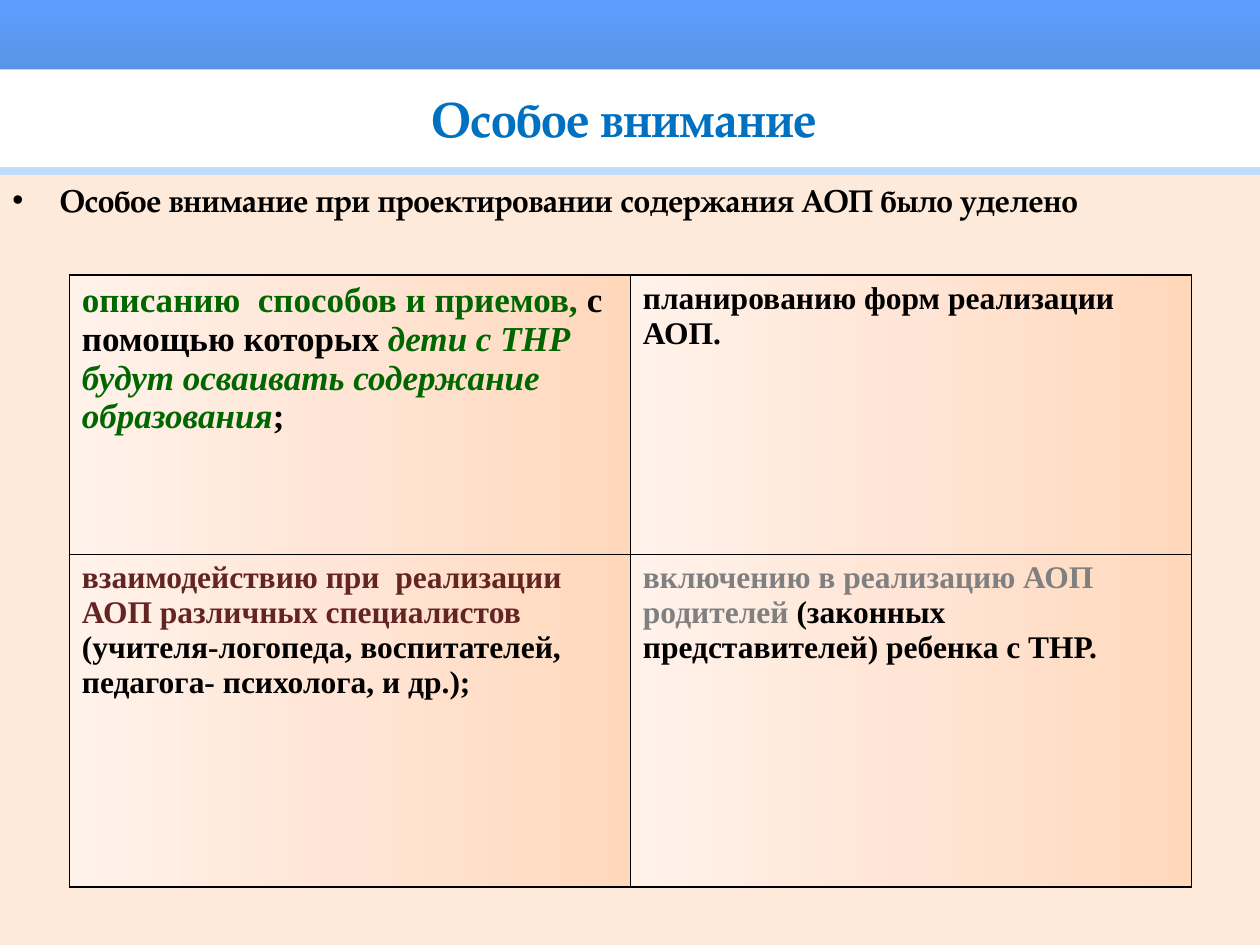
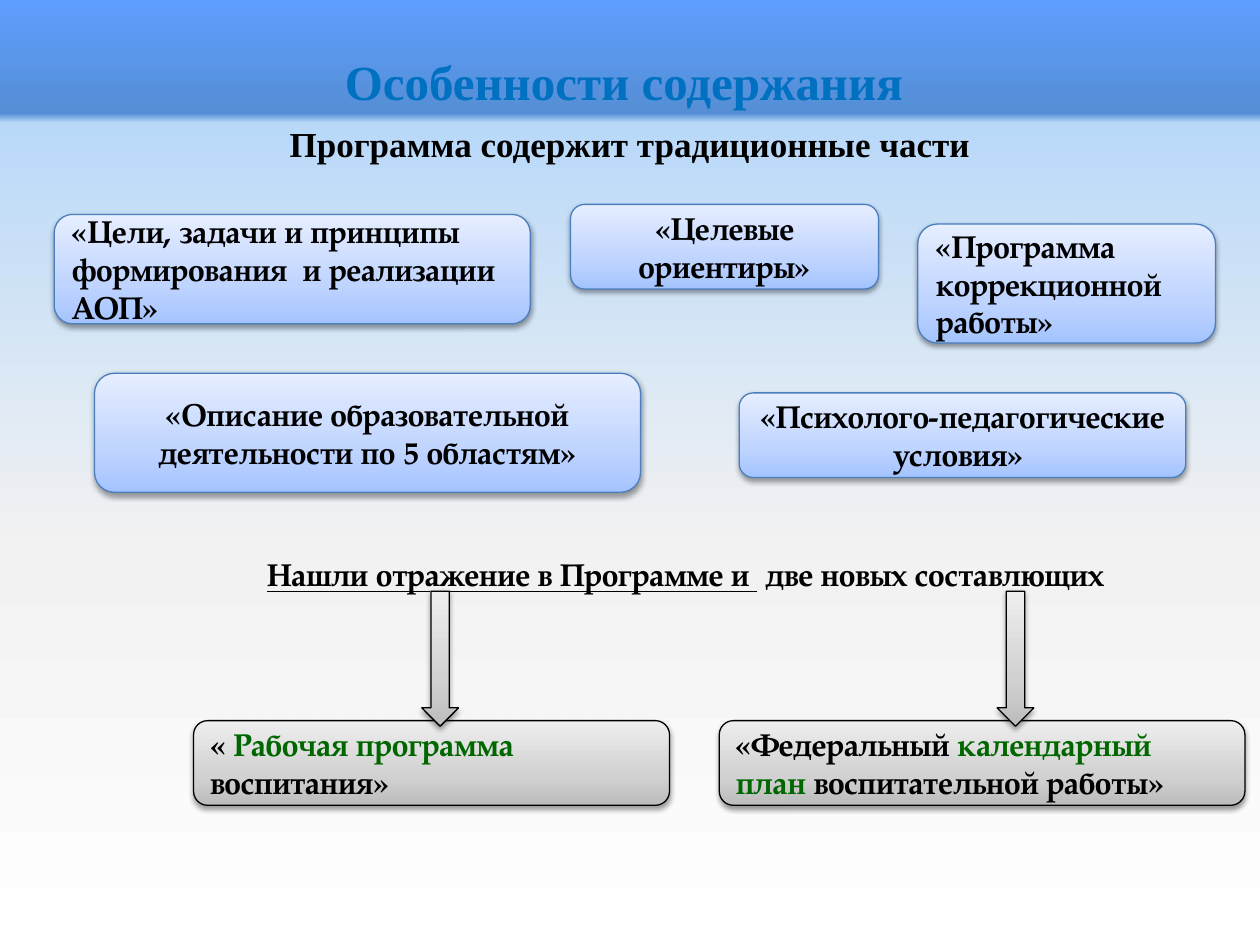
import pptx
import pptx.util
import pptx.dml.color
import pptx.enum.shapes
import pptx.enum.text
import pptx.oxml
import pptx.oxml.ns

Pt = pptx.util.Pt
RGB = pptx.dml.color.RGBColor
SHAPE = pptx.enum.shapes.MSO_SHAPE
ALIGN = pptx.enum.text.PP_ALIGN
ANCHOR = pptx.enum.text.MSO_ANCHOR
qn = pptx.oxml.ns.qn

BLACK = RGB(0, 0, 0)
WHITE = RGB(255, 255, 255)
TITLE_BLUE = RGB(0x00, 0x70, 0xC0)
PEACH = RGB(0xFD, 0xEA, 0xDA)
GREEN = RGB(0x00, 0x66, 0x00)
MAROON = RGB(0x63, 0x25, 0x23)
GREY = RGB(0x80, 0x80, 0x80)
BOX_BLUE = RGB(0x4B, 0x7E, 0xBC)

# Gradients: angle in degrees, then (position in percent, colour)
SKY = (90, [(0, "5E9EFF"), (12, "558ED5"), (13, "B9D9F9"), (58, "F2F2F2"), (100, "FFFFFF")])
PEACH_FADE = (180, [(0, "FFD8BC"), (50, "FFE5D5"), (100, "FFF2EA")])
BLUE_FADE = (270, [(0, "A4C4FF"), (35, "BFD4FF"), (100, "E6EEFF")])
GREY_FADE = (270, [(0, "BDBDBD"), (35, "D1D1D1"), (100, "EEEEEE")])

PAGELLA = "TeX Gyre Pagella"
TIMES = "Times New Roman"
WIDTH, HEIGHT = 720, 540

# A run is (text, overrides of the text style)
ATTENTION_TITLE = "Особое внимание "
ATTENTION_INTRO = "Особое внимание при проектировании содержания АОП было уделено"
ATTENTION_CELLS = [
    [(20, [("описанию  способов и приемов,", {"color": GREEN}),
           (" с помощью которых ", {}),
           ("дети с ТНР будут осваивать содержание образования",
            {"color": GREEN, "italic": True}),
           (";", {})]),
     (18, [("планированию форм реализации АОП.", {})])],
    [(18, [("взаимодействию при  реализации АОП различных специалистов ", {"color": MAROON}),
           ("(учителя-логопеда, воспитателей, педагога- психолога, и др.);", {})]),
     (18, [("включению в реализацию АОП родителей ", {"color": GREY}),
           ("(законных представителей) ребенка с ТНР.", {})])],
]
TABLE_LEFT, TABLE_TOP = 39.6, 157
COLUMN_WIDTH, ROW_HEIGHTS = 320.6, (159.8, 190)

CONTENT_TITLE = "Особенности содержания "
CONTENT_INTRO = "Программа содержит традиционные части"
TRADITIONAL_PARTS = [  # text, alignment, (left, top, width, height)
    ("«Цели, задачи и принципы формирования  и реализации АОП»", ALIGN.LEFT,
     (31, 122.5, 272, 62.5)),
    ("«Описание образовательной деятельности по 5 областям»", ALIGN.CENTER,
     (54, 213.3, 312, 68)),
    ("«Целевые ориентиры»", ALIGN.CENTER, (326, 116.8, 176, 48.4)),
    ("«Психолого-педагогические условия» ", ALIGN.CENTER, (422.4, 224.5, 255.2, 48.4)),
    ("«Программа коррекционной работы»", ALIGN.LEFT, (524.4, 128, 170.2, 68)),
]
NEW_PARTS_LEAD = [("Нашли отражение в Программе и ", {"underline": True}),
                  (" две новых составлющих ", {})]
NEW_PARTS = [  # runs, left, width, left of its arrow
    ([("« ", {}), ("Рабочая программа", {"color": GREEN}), (" воспитания»", {})],
     110.6, 272, 241),
    ([("«Федеральный ", {}), ("календарный план ", {"color": GREEN}),
      ("воспитательной работы»", {})], 411, 300.4, 569.8),
]
NEW_PART_TOP, NEW_PART_HEIGHT = 411.8, 48.4
ARROW_TOP, ARROW_WIDTH, ARROW_HEIGHT = 337.8, 21, 77.2


def xml(markup):
    return pptx.oxml.parse_xml(
        markup.replace(">", f" {pptx.oxml.ns.nsdecls('a')}>", 1)
        if "/>" not in markup.split(">", 1)[0] + ">" else markup)


def fill_gradient(fill, properties, gradient):
    """Give a fill, held by the XML element properties, all stops of a gradient."""
    angle, stops = gradient
    fill.gradient()
    old = properties.find(qn("a:gradFill"))
    marks = "".join(f'<a:gs pos="{pos * 1000}"><a:srgbClr val="{color}"/></a:gs>'
                    for pos, color in stops)
    new = xml(f'<a:gradFill rotWithShape="1"><a:gsLst>{marks}</a:gsLst>'
              f'<a:lin ang="{angle * 60000}" scaled="0"/></a:gradFill>')
    properties.replace(old, new)


def write(frame, runs, size, font=PAGELLA, align=ALIGN.LEFT, anchor=ANCHOR.TOP):
    """Write one bold paragraph of runs and return it."""
    frame.word_wrap = True
    frame.vertical_anchor = anchor
    paragraph = frame.paragraphs[0]
    paragraph.alignment = align
    for text, style in runs:
        run = paragraph.add_run()
        run.text = text
        run.font.name = font
        run.font.size = Pt(size)
        run.font.bold = True
        run.font.italic = style.get("italic", False)
        run.font.underline = style.get("underline", False)
        run.font.color.rgb = style.get("color", BLACK)
    return paragraph


def add_slide(deck):
    slide = deck.slides.add_slide(deck.slide_layouts[6])
    fill = slide.background.fill
    fill_gradient(fill, slide.background._cSld.bg.bgPr, SKY)
    return slide


def add_band(slide, top, height, color):
    band = slide.shapes.add_shape(SHAPE.RECTANGLE, 0, Pt(top), Pt(WIDTH), Pt(height))
    band.shadow.inherit = False
    band.fill.solid()
    band.fill.fore_color.rgb = color
    band.line.fill.background()
    return band


def add_text(slide, left, top, width, height):
    return slide.shapes.add_textbox(Pt(left), Pt(top), Pt(width), Pt(height)).text_frame


def write_title(frame, text, font):
    write(frame, [(text, {"color": TITLE_BLUE})], 28, font, ALIGN.CENTER, ANCHOR.MIDDLE)


def add_raised(slide, kind, place, gradient, line_color):
    """Add a shape with a gradient, a thin line and a soft shadow below."""
    shape = slide.shapes.add_shape(kind, *map(Pt, place))
    properties = shape._element.spPr
    fill_gradient(shape.fill, properties, gradient)
    shape.line.color.rgb = line_color
    shape.line.width = Pt(0.75)
    properties.append(xml(
        f'<a:effectLst><a:outerShdw blurRad="{Pt(3.1)}" dist="{Pt(1.6)}" dir="5400000" '
        'rotWithShape="0"><a:srgbClr val="000000"><a:alpha val="38000"/></a:srgbClr>'
        '</a:outerShdw></a:effectLst>'))
    return shape


def add_attention_table(slide):
    table = slide.shapes.add_table(
        len(ROW_HEIGHTS), 2, Pt(TABLE_LEFT), Pt(TABLE_TOP),
        Pt(2 * COLUMN_WIDTH), Pt(sum(ROW_HEIGHTS))).table
    table.first_row = table.horz_banding = False
    for column in table.columns:
        column.width = Pt(COLUMN_WIDTH)
    for r, (height, row) in enumerate(zip(ROW_HEIGHTS, ATTENTION_CELLS)):
        table.rows[r].height = Pt(height)
        for c, (size, runs) in enumerate(row):
            cell = table.cell(r, c)
            write(cell.text_frame, runs, size, TIMES)
            properties = cell._tc.get_or_add_tcPr()
            for side in "LRTB":
                properties.append(xml(
                    f'<a:ln{side} w="{Pt(1)}"><a:solidFill><a:srgbClr val="000000"/>'
                    f'</a:solidFill></a:ln{side}>'))
            fill_gradient(cell.fill, properties, PEACH_FADE)


def build_attention(deck):
    slide = add_slide(deck)
    write_title(add_band(slide, 39.6, 56, WHITE).text_frame, ATTENTION_TITLE, PAGELLA)
    body = add_band(slide, 100, HEIGHT - 100, PEACH)
    intro = write(body.text_frame, [(ATTENTION_INTRO, {})], 18)
    properties = intro._p.get_or_add_pPr()
    properties.set("marL", str(Pt(27)))
    properties.set("indent", str(Pt(-27)))
    properties.append(xml('<a:buFont typeface="Arial"></a:buFont>'))
    properties.append(xml('<a:buChar char="•"></a:buChar>'))
    add_attention_table(slide)


def build_content(deck):
    slide = add_slide(deck)
    write_title(add_text(slide, 36, 21.6, 648, 49.7), CONTENT_TITLE, TIMES)
    write(add_text(slide, 36, 66.2, 648, 416), [(CONTENT_INTRO, {})], 20, TIMES, ALIGN.CENTER)
    for text, align, place in TRADITIONAL_PARTS:
        box = add_raised(slide, SHAPE.FLOWCHART_ALTERNATE_PROCESS, place, BLUE_FADE, BOX_BLUE)
        write(box.text_frame, [(text, {})], 18, align=align, anchor=ANCHOR.MIDDLE)
    lead = write(add_text(slide, 105, 309.6, 578, 31.7), NEW_PARTS_LEAD, 18, align=ALIGN.CENTER)
    lead.line_spacing = 1.2
    for runs, left, width, _ in NEW_PARTS:
        box = add_raised(slide, SHAPE.FLOWCHART_ALTERNATE_PROCESS,
                         (left, NEW_PART_TOP, width, NEW_PART_HEIGHT), GREY_FADE, BLACK)
        write(box.text_frame, runs, 18, anchor=ANCHOR.MIDDLE)
    for *_, arrow_left in NEW_PARTS:
        add_raised(slide, SHAPE.DOWN_ARROW,
                   (arrow_left, ARROW_TOP, ARROW_WIDTH, ARROW_HEIGHT), GREY_FADE, BLACK)


def main():
    deck = pptx.Presentation()
    deck.slide_width, deck.slide_height = Pt(WIDTH), Pt(HEIGHT)
    build_attention(deck)
    build_content(deck)
    deck.save("out.pptx")


if __name__ == "__main__":
    main()
